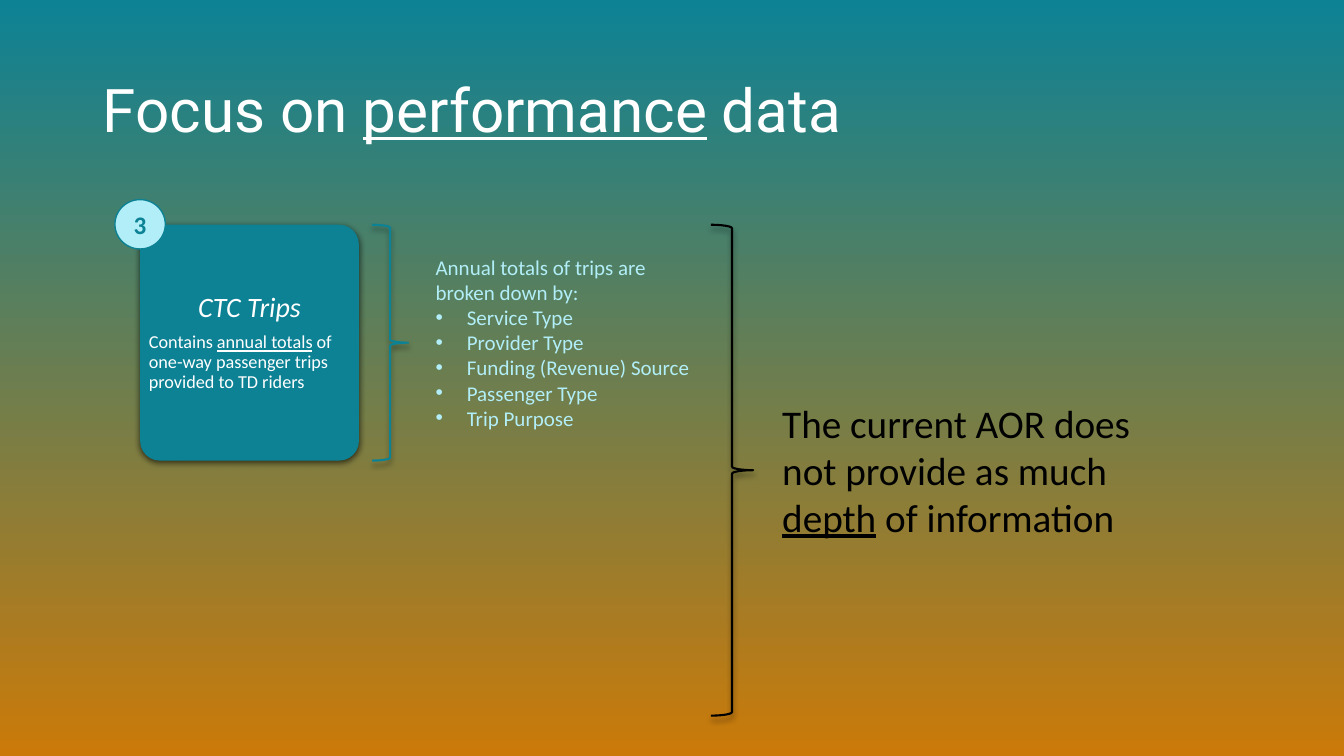
from lxml.etree import SubElement
from pptx import Presentation
from pptx.dml.color import RGBColor
from pptx.enum.shapes import MSO_SHAPE
from pptx.enum.text import MSO_ANCHOR, MSO_AUTO_SIZE, PP_ALIGN
from pptx.oxml.ns import qn
from pptx.util import Inches, Pt

TEAL = RGBColor(0x0D, 0x82, 0x95)
ORANGE = RGBColor(0xCB, 0x7A, 0x09)
PALE = RGBColor(0xB2, 0xEE, 0xF8)
WHITE = RGBColor(0xFF, 0xFF, 0xFF)
BLACK = RGBColor(0, 0, 0)


def write(para, parts, size, color, face="Calibri"):
    for i, part in enumerate(parts):
        run = para.add_run()
        run.text = part
        font = run.font
        font.name, font.size, font.color.rgb = face, Pt(size), color
        font.underline = i == 1


def shade(shape, alpha, blur, dist):
    shape.shadow.inherit = False
    effects = shape._element.spPr.find(qn("a:effectLst"))
    outer = SubElement(effects, qn("a:outerShdw"), blurRad=str(Pt(blur)),
                       dist=str(Pt(dist)), dir="5400000", rotWithShape="0")
    tint = SubElement(outer, qn("a:srgbClr"), val="000000")
    SubElement(tint, qn("a:alpha"), val=str(alpha * 1000))


deck = Presentation()
deck.slide_width, deck.slide_height = Inches(13.33), Inches(7.5)
slide = deck.slides.add_slide(deck.slide_layouts[1])
shapes = slide.shapes

back = slide.background.fill
back.gradient()
back.gradient_angle = 270
for stop, color in zip(back.gradient_stops, (TEAL, ORANGE)):
    stop.color.rgb = color

title = shapes.title
title.left, title.top = Inches(0.92), Inches(0.4)
title.width, title.height = Inches(11.5), Inches(1.45)
title.text_frame.vertical_anchor = MSO_ANCHOR.MIDDLE
head = title.text_frame.paragraphs[0]
head.alignment = PP_ALIGN.LEFT
head.line_spacing = 0.9
write(head, ["Focus on ", "performance", " data"], 43, WHITE, "Roboto")

card = shapes.add_shape(MSO_SHAPE.ROUNDED_RECTANGLE, Inches(1.39), Inches(2.23),
                        Inches(2.17), Inches(2.34))
card.adjustments[0] = 0.09
card.fill.solid()
card.fill.fore_color.rgb = TEAL
card.line.fill.background()
shade(card, 63, 4.5, 1.5)
frame = card.text_frame
frame.vertical_anchor = MSO_ANCHOR.MIDDLE
frame.margin_left = frame.margin_right = Inches(0.03)
frame.margin_top = frame.margin_bottom = Inches(0.03)
name, note = frame.paragraphs[0], frame.add_paragraph()
write(name, ["CTC Trips"], 20, WHITE)
name.runs[0].font.italic = True
write(note, ["Contains ", "annual totals",
             " of one-way passenger trips provided to TD riders"], 13, WHITE)
for para, align in ((name, PP_ALIGN.CENTER), (note, PP_ALIGN.LEFT)):
    para.alignment = align
    para.line_spacing = 0.9
    para.space_after = Pt(7)

for left, width, height, color in ((3.69, 0.36, 2.34, TEAL), (7.05, 0.42, 4.87, BLACK)):
    brace = shapes.add_shape(MSO_SHAPE.RIGHT_BRACE, Inches(left), Inches(2.23),
                             Inches(width), Inches(height))
    brace.fill.background()
    brace.line.color.rgb = color
    brace.line.width = Pt(1.5)
    shade(brace, 40, 4, 3)

body = slide.placeholders[1]
body.left, body.top = Inches(4.22), Inches(2.47)
body.width, body.height = Inches(2.89), Inches(1.87)
frame = body.text_frame
frame.auto_size = MSO_AUTO_SIZE.NONE
frame.text = "\n".join(["Annual totals of trips are broken down by:", "Service Type",
                        "Provider Type", "Funding (Revenue) Source",
                        "Passenger Type", "Trip Purpose"])
for i, para in enumerate(frame.paragraphs):
    para.space_before = Pt(0)
    font = para.runs[0].font
    font.name, font.size, font.color.rgb = "Calibri", Pt(15), PALE
    props = para._p.get_or_add_pPr()
    dent = Inches(0.31) if i else 0
    props.set("marL", str(dent))
    props.set("indent", str(-dent))
    if i:
        SubElement(props, qn("a:buFont"), typeface="Arial")
        SubElement(props, qn("a:buChar"), char="•")
    else:
        SubElement(props, qn("a:buNone"))

badge = shapes.add_shape(MSO_SHAPE.FLOWCHART_CONNECTOR, Inches(1.14), Inches(1.98),
                         Inches(0.5), Inches(0.49))
badge.shadow.inherit = False
badge.fill.solid()
badge.fill.fore_color.rgb = PALE
badge.line.color.rgb = TEAL
badge.line.width = Pt(1)
badge.text_frame.vertical_anchor = MSO_ANCHOR.MIDDLE
digit = badge.text_frame.paragraphs[0]
digit.alignment = PP_ALIGN.CENTER
write(digit, ["3"], 18, TEAL)
digit.runs[0].font.bold = True

claim = shapes.add_textbox(Inches(7.66), Inches(3.91), Inches(3.92), Inches(1.51))
claim.text_frame.word_wrap = True
write(claim.text_frame.paragraphs[0],
      ["The current AOR does not provide as much ", "depth", " of information"], 28, BLACK)

deck.save("out.pptx")
